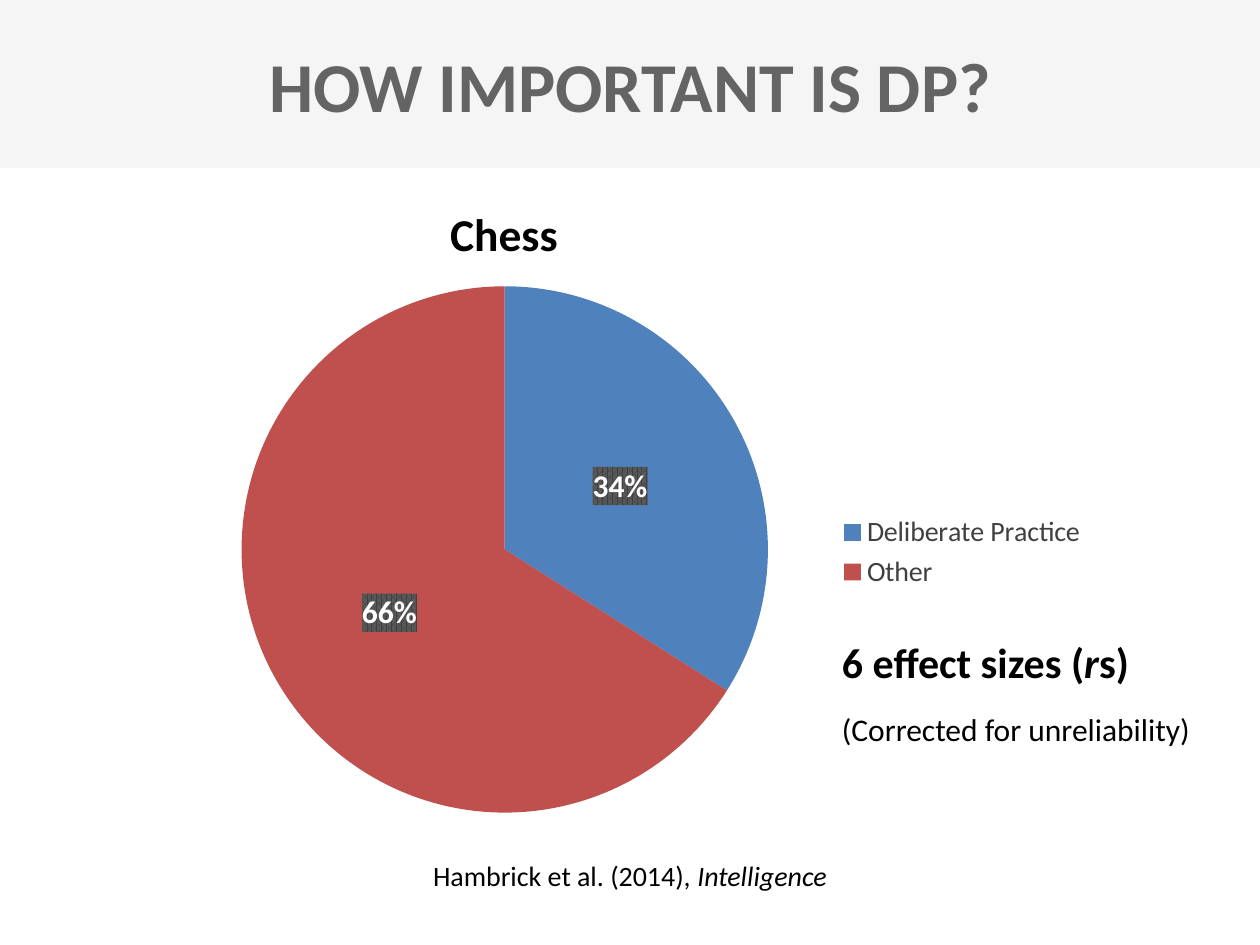
from dataclasses import dataclass

from lxml import etree
from pptx import Presentation
from pptx.chart.data import CategoryChartData
from pptx.dml.color import RGBColor
from pptx.enum.chart import XL_CHART_TYPE, XL_LABEL_POSITION, XL_LEGEND_POSITION
from pptx.enum.shapes import MSO_SHAPE
from pptx.enum.text import MSO_ANCHOR, MSO_AUTO_SIZE, PP_ALIGN
from pptx.oxml import parse_xml
from pptx.oxml.ns import nsdecls, qn
from pptx.util import Pt

PIE = XL_CHART_TYPE.PIE
LABEL_CENTER = XL_LABEL_POSITION.CENTER
LEGEND_RIGHT = XL_LEGEND_POSITION.RIGHT
RECTANGLE = MSO_SHAPE.RECTANGLE
MIDDLE = MSO_ANCHOR.MIDDLE
NO_AUTOFIT = MSO_AUTO_SIZE.NONE
LEFT, CENTER = PP_ALIGN.LEFT, PP_ALIGN.CENTER
TITLE_ONLY = 5

SLIDE_WIDTH, SLIDE_HEIGHT = 720, 540
BAND_HEIGHT = 96
NOTES_LEFT, NOTES_WIDTH = 474, 240


@dataclass(frozen=True)
class Theme:
    font: str = "Calibri"
    band: str = "F5F5F5"
    title: str = "646464"
    text: str = "000000"
    legend: str = "404040"
    label: str = "FFFFFF"
    label_pattern: tuple = ("404040", "595959")
    slices: tuple = ("4F81BD", "C0504D")
    title_size: int = 40
    heading_size: int = 26
    note_size: int = 24
    body_size: int = 18
    small_size: int = 16


class SlideBuilder:
    def __init__(self, slide, theme):
        self.slide = slide
        self.theme = theme

    def style(self, font, size, color, bold=False):
        font.name = self.theme.font
        font.size = Pt(size)
        font.bold = bold
        font.color.rgb = RGBColor.from_string(color)

    def band(self, height):
        shape = self.slide.shapes.add_shape(RECTANGLE, 0, 0, Pt(SLIDE_WIDTH), Pt(height))
        shape.shadow.inherit = False
        shape.fill.solid()
        shape.fill.fore_color.rgb = RGBColor.from_string(self.theme.band)
        shape.line.fill.background()
        # Keep the band behind the title placeholder
        self.slide.shapes.title._element.addprevious(shape._element)

    def title(self, text, top, height):
        title = self.slide.shapes.title
        title.left, title.top = Pt(0), Pt(top)
        title.width, title.height = Pt(SLIDE_WIDTH), Pt(height)
        frame = title.text_frame
        frame.text = text
        frame.auto_size = NO_AUTOFIT
        frame.vertical_anchor = MIDDLE
        paragraph = frame.paragraphs[0]
        paragraph.alignment = CENTER
        self.style(paragraph.font, self.theme.title_size, self.theme.title, bold=True)

    def text(self, runs, left, top, width, height, size, bold=False, align=LEFT):
        """Add one paragraph; runs are (text, italic) pairs."""
        box = self.slide.shapes.add_textbox(Pt(left), Pt(top), Pt(width), Pt(height))
        box.text_frame.word_wrap = True
        paragraph = box.text_frame.paragraphs[0]
        paragraph.alignment = align
        self.style(paragraph.font, size, self.theme.text, bold)
        for text, italic in runs:
            run = paragraph.add_run()
            run.text = text
            if italic:
                run.font.italic = True

    def pie(self, values, left, top, width, height, plot_layout, legend_layout):
        data = CategoryChartData()
        data.categories = list(values)
        data.add_series("Series 1", list(values.values()))
        chart = self.slide.shapes.add_chart(
            PIE, Pt(left), Pt(top), Pt(width), Pt(height), data).chart
        chart.has_title = False
        self.style(chart.font, 10, self.theme.text)

        # Slices
        plot = chart.plots[0]
        plot.vary_by_categories = True
        for index, color in enumerate(self.theme.slices):
            fill = plot.series[0].points[index].format.fill
            fill.solid()
            fill.fore_color.rgb = RGBColor.from_string(color)

        # Percent labels on a dark pattern
        labels = plot.series[0].data_labels
        labels.show_percentage = True
        labels.show_value = False
        labels.number_format = "0%"
        labels.number_format_is_linked = False
        labels.position = LABEL_CENTER
        self.style(labels.font, self.theme.body_size, self.theme.label, bold=True)
        front, back = self.theme.label_pattern
        pattern = parse_xml(
            f'<c:spPr {nsdecls("c", "a")}><a:pattFill prst="pct75">'
            f'<a:fgClr><a:srgbClr val="{front}"/></a:fgClr>'
            f'<a:bgClr><a:srgbClr val="{back}"/></a:bgClr></a:pattFill></c:spPr>')
        labels._element.find(qn("c:txPr")).addprevious(pattern)

        # Legend
        chart.has_legend = True
        chart.legend.position = LEGEND_RIGHT
        chart.legend.include_in_layout = False
        self.style(chart.legend.font, self.theme.small_size, self.theme.legend)

        # Fixed places for the pie and the legend
        plot_area = chart._chartSpace.find(".//" + qn("c:plotArea"))
        self.place(plot_area, plot_layout, inner=True)
        self.place(chart.legend._element, legend_layout)

    @staticmethod
    def place(element, fractions, inner=False):
        layout = element.find(qn("c:layout"))
        if layout is None:
            layout = etree.Element(qn("c:layout"))
            if inner:
                element.insert(0, layout)
            else:
                element.find(qn("c:legendPos")).addnext(layout)
        manual = etree.SubElement(layout, qn("c:manualLayout"))
        settings = [("layoutTarget", "inner")] if inner else []
        settings += [("xMode", "edge"), ("yMode", "edge")]
        settings += zip("xywh", fractions)
        for name, value in settings:
            etree.SubElement(manual, qn(f"c:{name}")).set("val", str(value))


def main():
    presentation = Presentation()
    presentation.slide_width, presentation.slide_height = Pt(SLIDE_WIDTH), Pt(SLIDE_HEIGHT)
    slide = presentation.slides.add_slide(presentation.slide_layouts[TITLE_ONLY])
    theme = Theme()
    builder = SlideBuilder(slide, theme)

    # Header
    builder.band(BAND_HEIGHT)
    builder.title("HOW IMPORTANT IS DP?", 32, 32)

    # Source line
    builder.text([("Hambrick et al. (2014), ", False), ("Intelligence", True)],
                 0, 487, SLIDE_WIDTH, 27, theme.small_size, align=CENTER)

    # Chart and its heading
    builder.pie({"Deliberate Practice": 34, "Other": 66}, 101, 154, 528, 320,
                plot_layout=(0.07, 0.03, 0.57, 0.94),
                legend_layout=(0.71, 0.43, 0.28, 0.15))
    builder.text([("Chess", False)], 135, 114, 306, 39,
                 theme.heading_size, bold=True, align=CENTER)

    # Notes beside the chart
    builder.text([("6 effect sizes (", False), ("r", True), ("s)", False)],
                 NOTES_LEFT, 360, NOTES_WIDTH, 36, theme.note_size, bold=True)
    builder.text([("(Corrected for unreliability)", False)],
                 NOTES_LEFT, 402, NOTES_WIDTH, 29, theme.body_size)

    presentation.save("out.pptx")


if __name__ == "__main__":
    main()
